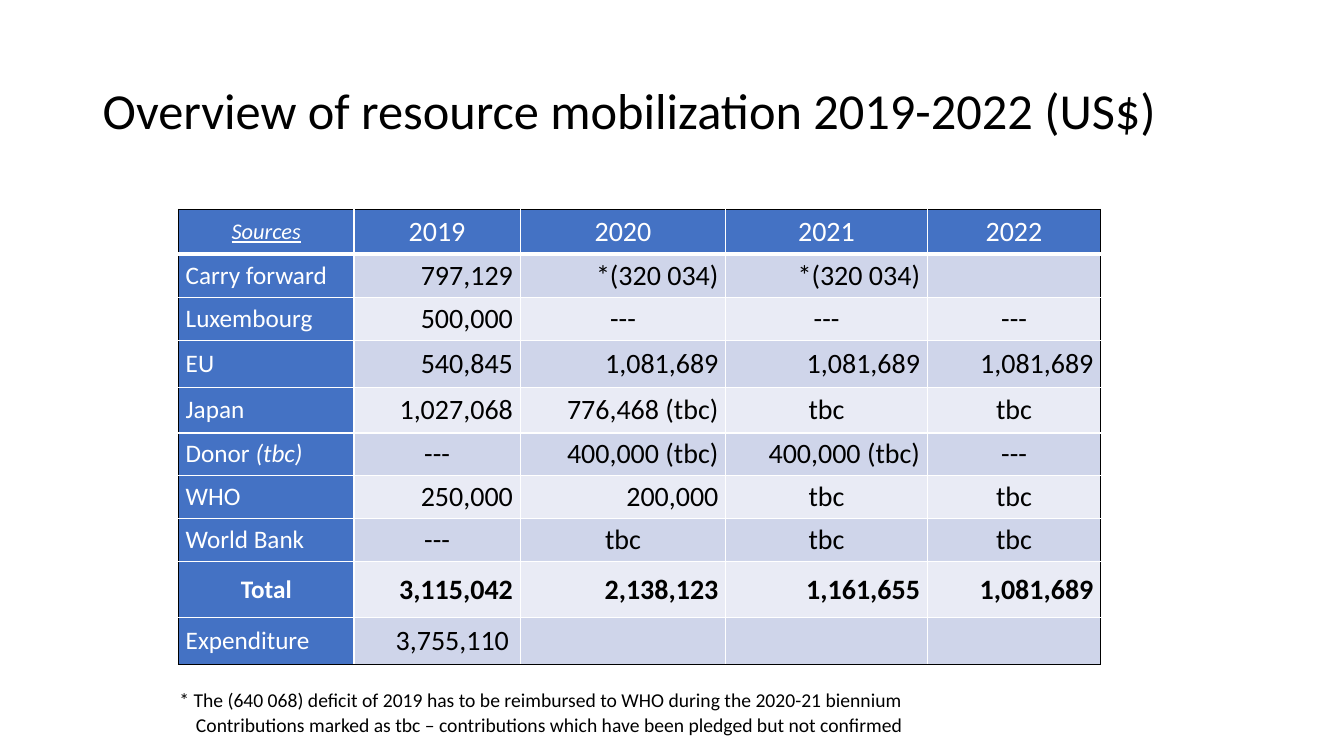
from lxml import etree
from pptx import Presentation
from pptx import util as u
from pptx.dml.color import RGBColor
from pptx.enum import text
from pptx.oxml import ns

COLORS = {"head": "4472C4", "odd": "CFD5EA", "even": "E9EBF5",
          "white": "FFFFFF", "black": "000000"}
FONT = "Calibri"
COL_WIDTHS = [4.42, 4.19, 5.18, 5.08, 4.37]
ROW_HEIGHTS = [1.12, 1.09, 1.09, 1.19, 1.14, 1.07, 1.09, 1.09, 1.4, 1.19]
ROWS = [
    ["Sources", "2019", "2020", "2021", "2022"],
    ["Carry forward", "797,129", "*(320 034)", "*(320 034)", ""],
    ["Luxembourg", "500,000", "---", "---", "---"],
    ["EU", "540,845", "1,081,689", "1,081,689", "1,081,689"],
    ["Japan", "1,027,068", "776,468 (tbc)", "tbc", "tbc"],
    ["Donor (tbc)", "---", "400,000 (tbc)", "400,000 (tbc)", "---"],
    ["WHO", "250,000", "200,000", "tbc", "tbc"],
    ["World Bank", "---", "tbc", "tbc", "tbc"],
    ["Total", "3,115,042", "2,138,123", "1,161,655", "1,081,689"],
    ["Expenditure", "3,755,110", "", "", ""],
]
NOTES = [
    ("* The (640 068) deficit of 2019 has to be reimbursed to WHO during the 2020-21 biennium", 1.5),
    ("Contributions marked as tbc – contributions which have been pledged but not confirmed", 1.92),
]


def add_run(p, content, size, color="black", bold=False, italic=False, underline=False):
    """Append one formatted run to a paragraph."""
    r = p.add_run()
    r.text = content
    r.font.name, r.font.size = FONT, u.Pt(size)
    r.font.bold, r.font.italic, r.font.underline = bold, italic, underline
    r.font.color.rgb = RGBColor.from_string(COLORS[color])


def add_textbox(s, left, top, width, height, anchor):
    """Add a wrapping text box and return its text frame."""
    tf = s.shapes.add_textbox(u.Cm(left), u.Cm(top), u.Cm(width), u.Cm(height)).text_frame
    tf.word_wrap = True
    tf.vertical_anchor = anchor
    return tf


def add_title(s, content):
    """Add the slide title."""
    tf = add_textbox(s, 2.34, 1.02, 29.21, 3.68, text.MSO_ANCHOR.MIDDLE)
    p = tf.paragraphs[0]
    p.line_spacing = 0.9
    add_run(p, content, 36)


def add_notes(s, notes):
    """Add the footnotes, each with its own left indent."""
    tf = add_textbox(s, 2.77, 17.17, 25.3, 1.5, text.MSO_ANCHOR.TOP)
    for i, (content, indent) in enumerate(notes):
        p = tf.add_paragraph() if i else tf.paragraphs[0]
        p.line_spacing = 1.07
        p._p.get_or_add_pPr().set("marL", str(u.Cm(indent)))
        add_run(p, content, 14)


def set_borders(cell, row, col):
    """Draw white inner borders and a black outer frame."""
    last_row, last_col = len(ROWS) - 1, len(COL_WIDTHS) - 1
    outer = {"L": col == 0, "R": col == last_col, "T": row == 0, "B": row == last_row}
    tcPr = cell._tc.get_or_add_tcPr()
    for i, (side, is_outer) in enumerate(outer.items()):
        width = 3 if row == 0 and side == "B" else 1
        ln = etree.Element(ns.qn(f"a:ln{side}"), w=str(u.Pt(width)))
        fill = etree.SubElement(ln, ns.qn("a:solidFill"))
        color = COLORS["black" if is_outer else "white"]
        etree.SubElement(fill, ns.qn("a:srgbClr"), val=color)
        tcPr.insert(i, ln)


def fill_cell(cell, row, col, content):
    """Style one table cell and write its text."""
    is_head = row == 0 or col == 0
    fill = "head" if is_head else "odd" if row % 2 else "even"
    cell.fill.solid()
    cell.fill.fore_color.rgb = RGBColor.from_string(COLORS[fill])
    cell.vertical_anchor = text.MSO_ANCHOR.MIDDLE
    cell.margin_left = cell.margin_right = u.Cm(0.18)
    cell.margin_top = cell.margin_bottom = 0
    set_borders(cell, row, col)
    if not content:
        return
    p = cell.text_frame.paragraphs[0]
    is_total = ROWS[row][0] == "Total"
    color = "white" if is_head else "black"
    if row == 0:
        p.alignment = text.PP_ALIGN.CENTER
        add_run(p, content, 20 if col else 16, color, italic=not col, underline=not col)
    elif col == 0:
        p.alignment = text.PP_ALIGN.CENTER if is_total else text.PP_ALIGN.LEFT
        label, mark, _ = content.partition("(tbc)")
        add_run(p, label, 18, color, bold=is_total)
        if mark:
            add_run(p, mark, 18, color, italic=True)
    else:
        is_amount = any(c.isdigit() for c in content)
        p.alignment = text.PP_ALIGN.RIGHT if is_amount else text.PP_ALIGN.CENTER
        add_run(p, content, 20, color, bold=is_total)


def add_funding_table(s):
    """Add the table of contributions by source and year."""
    table = s.shapes.add_table(len(ROWS), len(COL_WIDTHS), u.Cm(4.5), u.Cm(5.28),
                               u.Cm(sum(COL_WIDTHS)), u.Cm(sum(ROW_HEIGHTS))).table
    for column, width in zip(table.columns, COL_WIDTHS):
        column.width = u.Cm(width)
    for row, height in enumerate(ROW_HEIGHTS):
        table.rows[row].height = u.Cm(height)
        for col, content in enumerate(ROWS[row]):
            fill_cell(table.cell(row, col), row, col, content)
    table.cell(len(ROWS) - 1, 1).margin_right = u.Cm(0.28)


def main():
    """Build the slide and save it."""
    prs = Presentation()
    prs.slide_width, prs.slide_height = u.Cm(33.87), u.Cm(19.05)
    s = prs.slides.add_slide(prs.slide_layouts[6])
    add_title(s, "Overview of resource mobilization 2019-2022 (US$)")
    add_funding_table(s)
    add_notes(s, NOTES)
    prs.save("out.pptx")


if __name__ == "__main__":
    main()
